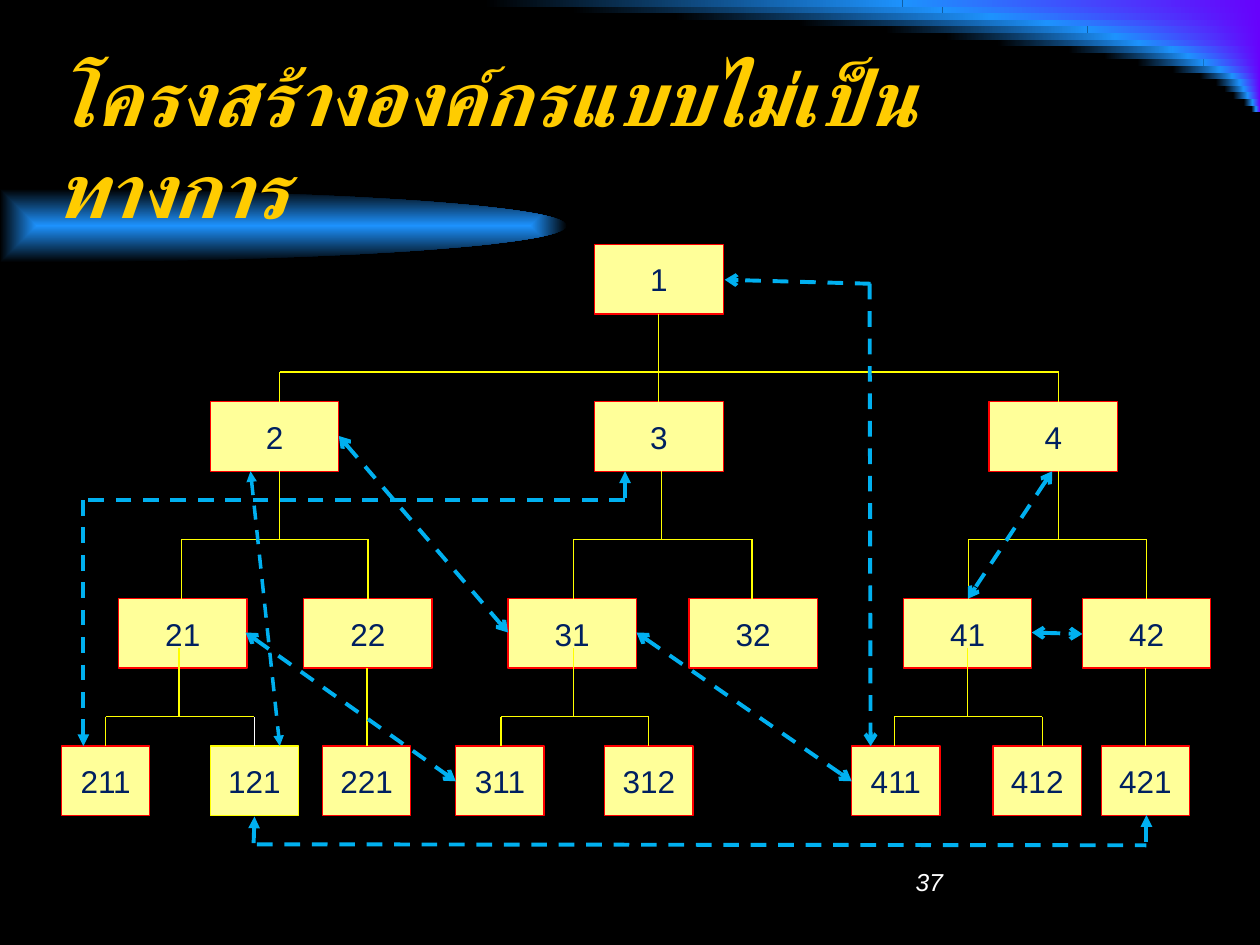
"""Build the informal organisation structure slide."""
import math
from lxml import etree
from pptx import Presentation
from pptx import util as u
from pptx.dml import color
from pptx.enum import dml, shapes, text
from pptx.oxml import ns

COLOURS = {name: color.RGBColor.from_string(value) for name, value in {
    "black": "000000", "blue": "1D92FD", "violet": "6702FC", "gold": "FFCC00",
    "white": "FFFFFF", "yellow": "FFFF00", "cream": "FFFF99", "red": "FF0000",
    "navy": "002060", "sky": "00B0F0"}.items()}


def write(shape, words, frame_format, font_format, colour, align):
    frame = shape.text_frame
    for name, value in frame_format.items():
        setattr(frame, name, value)
    paragraph = frame.paragraphs[0]
    paragraph.alignment = align
    run = paragraph.add_run()
    run.text = words
    for name, value in font_format.items():
        setattr(run.font, name, value)
    run.font.color.rgb = COLOURS[colour]


def add_line(ends, colour, width, dash=None, head=None, tail=None):
    connector = slide.shapes.add_connector(
        shapes.MSO_CONNECTOR.STRAIGHT, *[u.Cm(value) for value in ends])
    connector.line.color.rgb = COLOURS[colour]
    connector.line.width = u.Pt(width)
    if dash:
        connector.line.dash_style = dash
    properties = connector.element.spPr
    outline = properties.find(ns.qn("a:ln"))
    for tag, arrow in (("a:headEnd", head), ("a:tailEnd", tail)):
        if arrow:
            etree.SubElement(outline, ns.qn(tag), type=arrow)
    etree.SubElement(properties, ns.qn("a:effectLst"))


presentation = Presentation()
presentation.slide_width, presentation.slide_height = u.Cm(25.4), u.Cm(19.05)
slide = presentation.slides.add_slide(presentation.slide_layouts[6])
slide.background.fill.solid()
slide.background.fill.fore_color.rgb = COLOURS["black"]

STRIP_HEIGHT = 0.133
VIOLET_WIDTHS = (7.21, 6.4, 5.44, 4.29, 3.48, 2.92, 2.44, 1.78, 1.45,
                 1.14, 0.81, 0.56, 0.41, 0.33, 0.25, 0.15, 0.08)
gradients = []
for row, width in enumerate(VIOLET_WIDTHS):
    middle = 25.4 - width
    for left, length, stops in ((middle, width, ("blue", "violet")),
                                (middle - 1.17 * width, 1.17 * width, ("black", "blue"))):
        strip = slide.shapes.add_shape(
            shapes.MSO_SHAPE.RECTANGLE, u.Cm(left), u.Cm(row * STRIP_HEIGHT),
            u.Cm(length), u.Cm(STRIP_HEIGHT))
        gradients.append((strip, stops))

angles = [math.radians(degree) for degree in range(-90, 91, 3)]
points = [(u.Cm(11.43 * math.cos(angle)), u.Cm(4.55 + 0.74 * math.sin(angle)))
          for angle in angles]
builder = slide.shapes.build_freeform(*points[0])
builder.add_line_segments(points[1:], close=True)
half_ellipse = builder.convert_to_shape()
gradients.append((half_ellipse, ("blue", "black")))

for shape, stops in gradients:
    shape.shadow.inherit = False
    shape.line.fill.background()
    shape.fill.gradient()
    shape.fill.gradient_angle = 0
    for stop, colour in zip(shape.fill.gradient_stops, stops):
        stop.color.rgb = COLOURS[colour]

gradient = half_ellipse.element.spPr.find(ns.qn("a:gradFill"))
gradient.remove(gradient.find(ns.qn("a:lin")))
centre = etree.SubElement(gradient, ns.qn("a:path"), path="shape")
etree.SubElement(centre, ns.qn("a:fillToRect"),
                 {side: "50000" for side in "ltrb"})

TEXTS = (
    ("โครงสร้างองค์กรแบบไม่เป็นทางการ", (0.84, 1.27, 21.59, 3.18),
     text.MSO_ANCHOR.MIDDLE, "gold",
     {"name": "Arial Narrow", "size": u.Pt(44), "bold": True, "italic": True}),
    ("37", (18.21, 17.35, 5.28, 1.27), text.MSO_ANCHOR.TOP, "white",
     {"name": "Arial", "size": u.Pt(14), "italic": True}),
)
for words, place, anchor, colour, font_format in TEXTS:
    box = slide.shapes.add_textbox(*[u.Cm(value) for value in place])
    write(box, words, {"word_wrap": True, "vertical_anchor": anchor},
          font_format, colour, text.PP_ALIGN.LEFT)

LEVELS = (
    (4.93, 2.59, {"1": 11.99}),
    (8.1, 2.59, {"2": 4.24, "3": 11.99, "4": 19.94}),
    (12.07, 2.59, {"21": 2.39, "22": 6.12, "31": 10.24, "32": 13.89,
                   "41": 18.21, "42": 21.82}),
    (15.04, 1.78, {"211": 1.24, "121": 4.24, "221": 6.5, "311": 9.19, "312": 12.19,
                   "411": 17.17, "412": 20.02, "421": 22.2}),
)
BOX_FRAME = {"vertical_anchor": text.MSO_ANCHOR.MIDDLE, "word_wrap": True,
             "margin_left": 0, "margin_right": 0}
BOX_FONT = {"name": "Arial", "size": u.Pt(18)}
for top, width, units in LEVELS:
    for number, left in units.items():
        box = slide.shapes.add_shape(shapes.MSO_SHAPE.RECTANGLE, u.Cm(left),
                                     u.Cm(top), u.Cm(width), u.Cm(1.4))
        box.shadow.inherit = False
        box.fill.solid()
        box.fill.fore_color.rgb = COLOURS["cream"]
        box.line.color.rgb = COLOURS["yellow" if number == "121" else "red"]
        box.line.width = u.Pt(0.75)
        write(box, number, BOX_FRAME, BOX_FONT, "navy", text.PP_ALIGN.CENTER)

BRANCHES = (
    (6.32, 7.5, 8.1, {13.28: (5.64, 13.28, 21.34)}),
    (9.5, 10.87, 12.07, {5.64: (3.66, 7.42), 13.34: (11.56, 15.16),
                         21.34: (19.53, 23.11)}),
    (13.06, 14.45, 15.04, {3.61: (2.13, 5.13), 11.56: (10.1, 13.08),
                           19.5: (18.03, 21.01)}),
    (13.47, 14.45, 15.04, {7.4: (7.4,), 23.09: (23.09,)}),
)
for top, bar, bottom, families in BRANCHES:
    for parent, children in families.items():
        add_line((parent, top, parent, bar), "yellow", 0.75)
        for child in children:
            add_line((child, bar, child, bottom),
                     "white" if child == 5.13 else "yellow", 0.75)
        if len(children) > 1:
            add_line((children[0], bar, children[-1], bar), "yellow", 0.75)

INFORMAL_LINKS = (
    ((5.05, 9.5, 5.64, 15.04), 2, "triangle", "triangle"),
    ((6.83, 8.79, 10.24, 12.75), 2.25, "arrow", "arrow"),
    ((12.83, 12.75, 17.17, 15.75), 2.25, "arrow", "arrow"),
    ((4.95, 12.75, 9.19, 15.75), 2.25, "arrow", "arrow"),
    ((20.8, 12.75, 21.82, 12.78), 2.25, "arrow", "arrow"),
    ((21.21, 9.5, 19.51, 12.07), 2.25, "arrow", "arrow"),
    ((5.18, 17.02, 23.11, 17.04), 2.25, None, None),
    ((5.13, 16.46, 5.11, 17.07), 2.25, "triangle", None),
    ((23.11, 16.43, 23.11, 17.02), 2.25, "triangle", None),
    ((12.6, 9.5, 12.6, 10.08), 2.25, "triangle", None),
    ((1.68, 10.08, 1.68, 15.04), 2.25, None, "triangle"),
    ((12.6, 10.08, 1.68, 10.08), 2.25, None, None),
    ((17.53, 5.72, 17.55, 15.04), 2.25, None, "arrow"),
    ((17.55, 5.72, 14.61, 5.64), 2.25, None, "arrow"),
)
for ends, width, head, tail in INFORMAL_LINKS:
    add_line(ends, "sky", width, dml.MSO_LINE.DASH, head, tail)

presentation.save("out.pptx")
